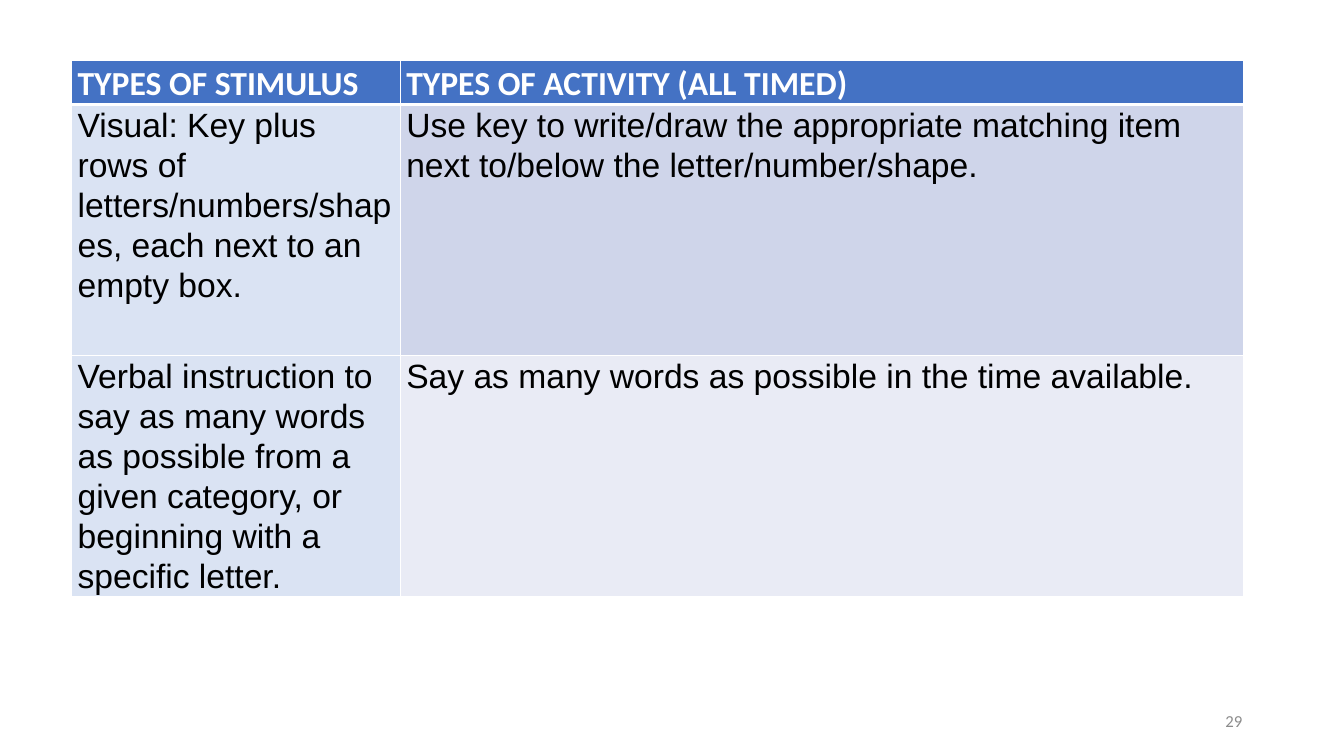
"""Build a slide with a table of stimulus and activity types."""
from dataclasses import dataclass

from lxml import etree
from pptx import Presentation
from pptx.dml.color import RGBColor
from pptx.enum.text import MSO_ANCHOR, PP_ALIGN
from pptx.oxml.ns import qn
from pptx.slide import Slide
from pptx.table import _Cell
from pptx.text.text import _Paragraph
from pptx.util import Inches, Pt

MIDDLE = MSO_ANCHOR.MIDDLE
RIGHT = PP_ALIGN.RIGHT

WHITE = RGBColor(0xFF, 0xFF, 0xFF)
BLACK = RGBColor(0x00, 0x00, 0x00)
GREY = RGBColor(0x8C, 0x8C, 0x8C)
BLUE = RGBColor(0x44, 0x72, 0xC4)
PALE_BLUE = RGBColor(0xDA, 0xE3, 0xF3)
LAVENDER = RGBColor(0xCF, 0xD5, 0xEA)
PALE_LAVENDER = RGBColor(0xE9, 0xEB, 0xF5)

HEADER_FONT = {"name": "Calibri", "size": Pt(24), "bold": True}
BODY_FONT = {"name": "Arial", "size": Pt(24), "bold": False}
NUMBER_FONT = {"name": "Calibri", "size": Pt(12)}
CELL_FORMAT = {
    "margin_left": Inches(0.06),
    "margin_right": Inches(0.06),
    "margin_top": 0,
    "margin_bottom": 0,
}
PARAGRAPH_FORMAT = {"line_spacing": 1.07, "space_after": Pt(8)}
COLUMN_WIDTHS = (3.26, 8.36)


@dataclass(frozen=True)
class TableRow:
    """Hold the wording and look of one table row."""

    height: float
    texts: tuple[str, str]
    fills: tuple[RGBColor, RGBColor]
    font: dict
    color: RGBColor
    top_border: int = 1
    bottom_border: int = 1


ROWS = (
    TableRow(
        0.43,
        ("TYPES OF STIMULUS", "TYPES OF ACTIVITY (ALL TIMED)"),
        (BLUE, BLUE),
        HEADER_FONT,
        WHITE,
        bottom_border=3,
    ),
    TableRow(
        2.49,
        (
            "Visual: Key plus rows of letters/numbers/shapes, "
            "each next to an empty box.",
            "Use key to write/draw the appropriate matching item "
            "next to/below the letter/number/shape.",
        ),
        (PALE_BLUE, LAVENDER),
        BODY_FONT,
        BLACK,
        top_border=3,
    ),
    TableRow(
        2.39,
        (
            "Verbal instruction to say as many words as possible "
            "from a given category, or beginning with a specific letter.",
            "Say as many words as possible in the time available.",
        ),
        (PALE_BLUE, PALE_LAVENDER),
        BODY_FONT,
        BLACK,
    ),
)


def apply_format(target: object, values: dict) -> None:
    """Set each named attribute on the target."""
    for name, value in values.items():
        setattr(target, name, value)


def write_text(para: _Paragraph, text: str, font: dict, color: RGBColor) -> None:
    """Add one formatted span to a paragraph."""
    span = para.add_run()
    span.text = text
    apply_format(span.font, font)
    span.font.color.rgb = color


def set_borders(cell: _Cell, top: int, bottom: int) -> None:
    """Draw white lines around a cell, with widths in points."""
    properties = cell._tc.get_or_add_tcPr()
    sides = {"lnL": 1, "lnR": 1, "lnT": top, "lnB": bottom}
    for position, (side, width) in enumerate(sides.items()):
        line = etree.Element(qn(f"a:{side}"), w=str(Pt(width)))
        fill = etree.SubElement(line, qn("a:solidFill"))
        etree.SubElement(fill, qn("a:srgbClr"), val=str(WHITE))
        properties.insert(position, line)


def add_activity_table(page: Slide) -> None:
    """Add the table of stimulus and activity types."""
    height = sum(row.height for row in ROWS)
    frame = page.shapes.add_table(
        len(ROWS), len(COLUMN_WIDTHS), Inches(0.71), Inches(0.6),
        Inches(sum(COLUMN_WIDTHS)), Inches(height),
    )
    table = frame.table
    table.horz_banding = False
    for column, width in zip(table.columns, COLUMN_WIDTHS):
        column.width = Inches(width)
    for table_row, row in zip(table.rows, ROWS):
        table_row.height = Inches(row.height)
        for cell, text, color in zip(table_row.cells, row.texts, row.fills):
            apply_format(cell, CELL_FORMAT)
            cell.fill.solid()
            cell.fill.fore_color.rgb = color
            set_borders(cell, row.top_border, row.bottom_border)
            para = cell.text_frame.paragraphs[0]
            apply_format(para, PARAGRAPH_FORMAT)
            write_text(para, text, row.font, row.color)


def add_page_number(page: Slide, number: str) -> None:
    """Add the page number at the lower right."""
    box = page.shapes.add_textbox(
        Inches(9.42), Inches(6.95), Inches(3), Inches(0.4)
    )
    apply_format(box.text_frame, {"word_wrap": True, "vertical_anchor": MIDDLE})
    para = box.text_frame.paragraphs[0]
    para.alignment = RIGHT
    write_text(para, number, NUMBER_FONT, GREY)


def main() -> None:
    """Build and save the deck."""
    deck = Presentation()
    deck.slide_width = Inches(13.33)
    deck.slide_height = Inches(7.5)
    page = deck.slides.add_slide(deck.slide_layouts[6])
    add_activity_table(page)
    add_page_number(page, "29")
    deck.save("out.pptx")


if __name__ == "__main__":
    main()
